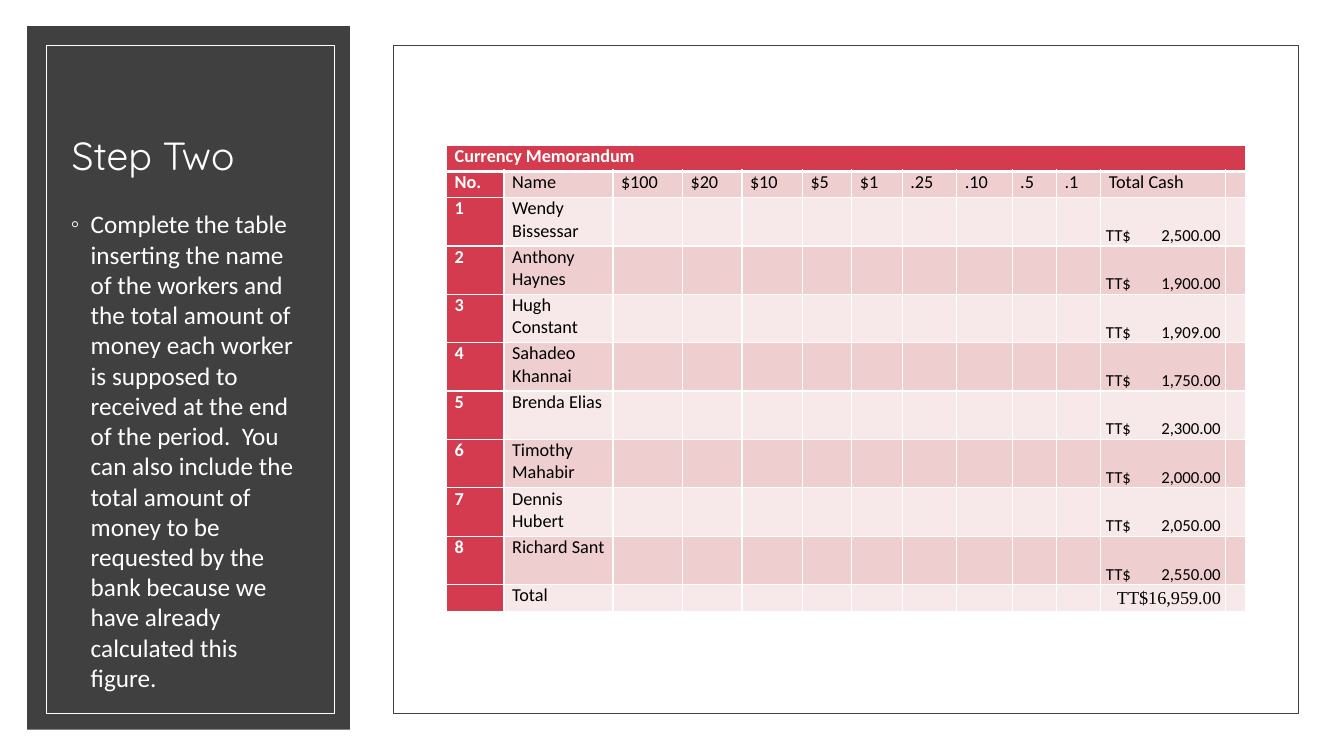
from lxml import etree
from pptx import Presentation
from pptx.dml.color import RGBColor
from pptx.enum.shapes import MSO_SHAPE as SHAPE
from pptx.enum.text import MSO_ANCHOR as ANCHOR, MSO_AUTO_SIZE as AUTO, PP_ALIGN as ALIGN
from pptx.oxml.ns import qn
from pptx.util import Inches, Pt

WHITE, BLACK, GREY = "FFFFFF", "000000", "404040"
RED, ROSE, PALE = "D43B4E", "EFCED0", "F7E8E9"
COLS = [0.57, 1.08, 0.69, 0.59, 0.6, 0.49, 0.5, 0.54, 0.55, 0.44, 0.44, 1.24, 0.19]
HEADS = ["No.", "Name", "$100", "$20", "$10", "$5", "$1", ".25", ".10", ".5", ".1", "Total Cash"]
WORKERS = [
    ("Wendy Bissessar", "2,500.00"),
    ("Anthony Haynes", "1,900.00"),
    ("Hugh Constant", "1,909.00"),
    ("Sahadeo Khannai", "1,750.00"),
    ("Brenda Elias", "2,300.00"),
    ("Timothy Mahabir", "2,000.00"),
    ("Dennis Hubert", "2,050.00"),
    ("Richard Sant", "2,550.00"),
]
CASH = HEADS.index("Total Cash")
STEP = (
    "Complete the table inserting the name of the workers and the total amount of money "
    "each worker is supposed to received at the end of the period.  You can also include "
    "the total amount of money to be requested by the bank because we have already "
    "calculated this figure."
)


def rgb(value):
    return RGBColor.from_string(value)


def set_font(p, size, color, name="Calibri", bold=False):
    f = p.font
    f.size, f.name, f.bold = Pt(size), name, bold
    f.color.rgb = rgb(color)


def add_box(s, x, y, w, h, fill=None, line=None):
    sp = s.shapes.add_shape(SHAPE.RECTANGLE, Inches(x), Inches(y), Inches(w), Inches(h))
    sp.shadow.inherit = False
    if fill:
        sp.fill.solid()
        sp.fill.fore_color.rgb = rgb(fill)
    else:
        sp.fill.background()
    if line:
        sp.line.color.rgb = rgb(line)
        sp.line.width = Pt(0.5)
    else:
        sp.line.fill.background()


def fill_placeholder(s, sp, text, x, y, w, h, anchor):
    s.shapes.element.append(sp.element)
    sp.left, sp.top, sp.width, sp.height = Inches(x), Inches(y), Inches(w), Inches(h)
    tf = sp.text_frame
    tf.word_wrap, tf.auto_size, tf.vertical_anchor = True, AUTO.NONE, anchor
    tf.text = text
    p = tf.paragraphs[0]
    p.alignment = ALIGN.LEFT
    return p


def set_bullet(p, char, indent):
    pPr = p._p.get_or_add_pPr()
    pPr.set("marL", str(Inches(indent)))
    pPr.set("indent", str(-Inches(indent)))
    bullet = etree.Element(qn("a:buChar"), char=char)
    pPr.find(qn("a:defRPr")).addprevious(bullet)


def add_sidebar(s, x, y, w, h):
    add_box(s, x, y, w, h, fill=GREY)
    add_box(s, x + 0.19, y + 0.19, w - 0.34, h - 0.35, line=WHITE)
    p = fill_placeholder(s, s.shapes.title, "Step Two", x + 0.34, y + 0.41, 2.53, 1.16, ANCHOR.BOTTOM)
    p.line_spacing = 0.9
    set_font(p, 28, WHITE, "Quicksand")
    p = fill_placeholder(s, s.placeholders[1], STEP, x + 0.33, y + 1.76, 2.53, 4.22, ANCHOR.TOP)
    p.space_before = Pt(9)
    set_font(p, 18, WHITE)
    set_bullet(p, "◦", 0.2)


def set_borders(cell, bottom=1, top=1):
    tcPr = cell._tc.get_or_add_tcPr()
    for side, width in (("L", 1), ("R", 1), ("T", top), ("B", bottom)):
        ln = etree.SubElement(tcPr, qn("a:ln" + side), w=str(Pt(width)))
        solid = etree.SubElement(ln, qn("a:solidFill"))
        etree.SubElement(solid, qn("a:srgbClr"), val=WHITE)


def set_cell(cell, text, row, col):
    set_borders(cell, bottom=3 if row == 0 else 1, top=3 if row == 1 else 1)
    red = row == 0 or col == 0
    cell.fill.solid()
    cell.fill.fore_color.rgb = rgb(RED if red else ROSE if row % 2 else PALE)
    cell.margin_left = cell.margin_right = Inches(0.08)
    cell.margin_top = cell.margin_bottom = 0
    cell.text = text
    set_font(cell.text_frame.paragraphs[0], 13, WHITE if red else BLACK, bold=red)


def format_cash(cell):
    cell.margin_left, cell.margin_right = Inches(0.05), Inches(0.01)
    cell.vertical_anchor = ANCHOR.BOTTOM
    p = cell.text_frame.paragraphs[0]
    p.font.size = Pt(12)
    tabs = etree.Element(qn("a:tabLst"))
    etree.SubElement(tabs, qn("a:tab"), pos=str(Inches(1.14)), algn="r")
    p._p.pPr.find(qn("a:defRPr")).addprevious(tabs)


def format_total(cell):
    cell.margin_left = cell.margin_right = Inches(0.05)
    cell.vertical_anchor = ANCHOR.MIDDLE
    p = cell.text_frame.paragraphs[0]
    p.alignment = ALIGN.RIGHT
    p.font.name = "Times New Roman"


def add_memorandum(s, x, y):
    gap = [""] * (CASH - 2)
    rows = [["Currency Memorandum"], HEADS]
    rows += [[str(n), name, *gap, f"TT$\t{cash}"] for n, (name, cash) in enumerate(WORKERS, 1)]
    rows.append(["", "Total", *gap, "TT$16,959.00"])
    heights = [0.26, 0.26] + [0.48] * len(WORKERS) + [0.27]

    frame = s.shapes.add_table(len(rows), len(COLS), Inches(x), Inches(y),
                               Inches(sum(COLS)), Inches(sum(heights)))
    table = frame.table
    table.first_row = table.horz_banding = False
    for column, width in zip(table.columns, COLS):
        column.width = Inches(width)
    for r, (texts, height) in enumerate(zip(rows, heights)):
        table.rows[r].height = Inches(height)
        texts = texts + [""] * (len(COLS) - len(texts))
        for c, text in enumerate(texts):
            set_cell(table.cell(r, c), text, r, c)
    table.cell(0, 0).merge(table.cell(0, len(COLS) - 1))
    for r in range(2, 2 + len(WORKERS)):
        format_cash(table.cell(r, CASH))
    format_total(table.cell(len(rows) - 1, CASH))


def add_content(s, x, y, w, h):
    add_box(s, x, y, w, h, line=GREY)
    add_memorandum(s, x + 0.53, y + 0.99)


def main():
    prs = Presentation()
    prs.slide_width, prs.slide_height = Inches(13.33), Inches(7.5)
    s = prs.slides.add_slide(prs.slide_layouts[1])
    s.background.fill.solid()
    s.background.fill.fore_color.rgb = rgb(WHITE)
    add_sidebar(s, 0.27, 0.26, 3.2, 6.98)
    add_content(s, 3.9, 0.45, 8.98, 6.63)
    prs.save("out.pptx")


if __name__ == "__main__":
    main()
